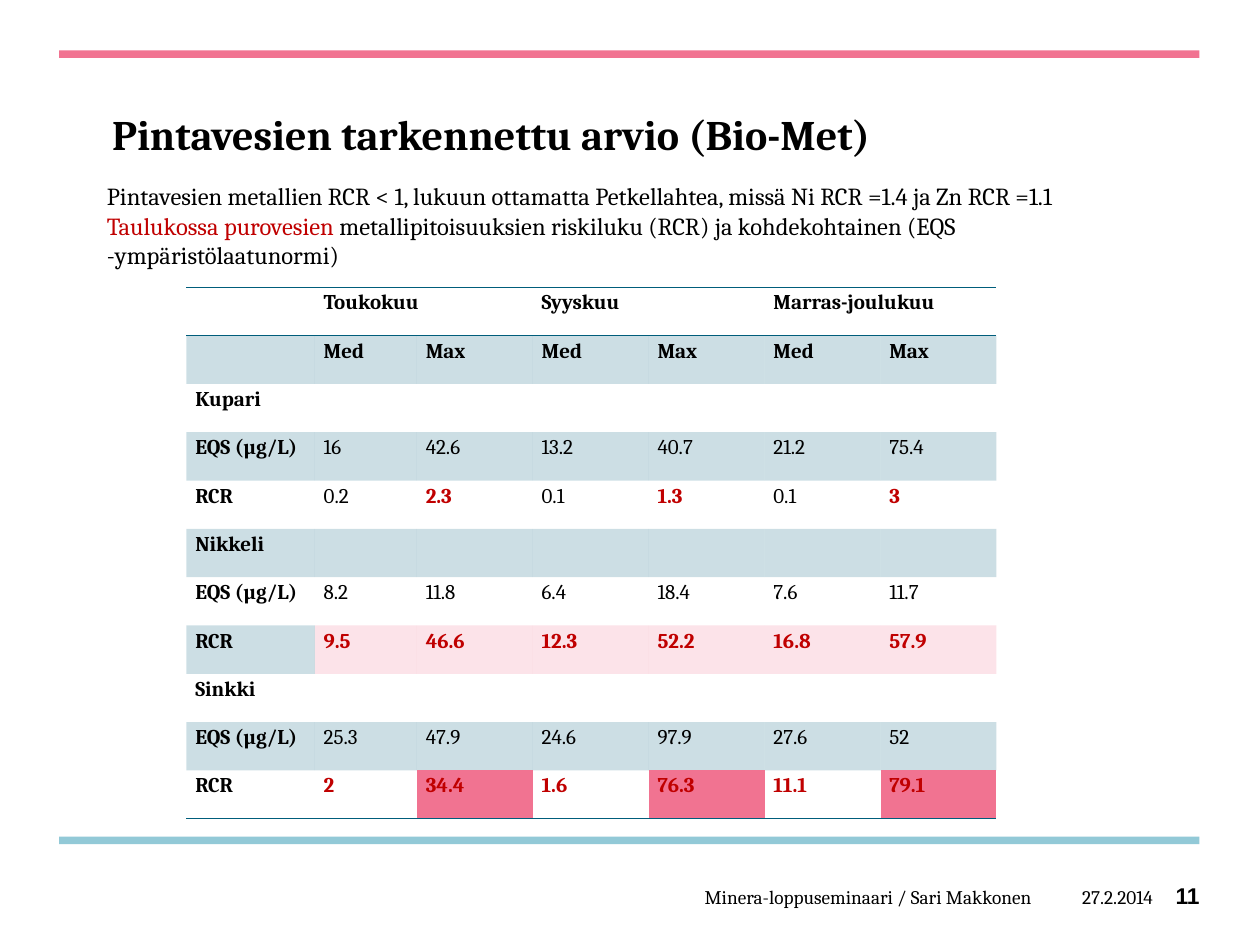
from lxml.etree import SubElement
from pptx import Presentation
from pptx.dml.color import RGBColor
from pptx.enum.shapes import MSO_SHAPE
from pptx.enum.text import MSO_ANCHOR as ANCHOR, PP_ALIGN as ALIGN
from pptx.oxml.ns import qn
from pptx.util import Inches, Pt

# Content
COLORS = {"black": "000000", "red": "C00000", "teal": "005D7B",
          "pink": "F17391", "blue": "92C9D7"}
TITLE = "Pintavesien tarkennettu arvio (Bio-Met)"
INTRO = [
    [("Pintavesien metallien RCR < 1, lukuun ottamatta Petkellahtea, "
      "missä Ni RCR =1.4 ja Zn RCR =1.1", "black")],
    [("Taulukossa purovesien ", "red"),
     ("metallipitoisuuksien riskiluku (RCR) ja kohdekohtainen "
      "(EQS -ympäristölaatunormi)", "black")],
]
MONTHS = ["Toukokuu", "Syyskuu", "Marras-joulukuu"]
METALS = {
    "Kupari": [("EQS (µg/L)", "16 42.6 13.2 40.7 21.2 75.4"),
               ("RCR", "0.2 2.3 0.1 1.3 0.1 3")],
    "Nikkeli": [("EQS (µg/L)", "8.2 11.8 6.4 18.4 7.6 11.7"),
                ("RCR", "9.5 46.6 12.3 52.2 16.8 57.9")],
    "Sinkki": [("EQS (µg/L)", "25.3 47.9 24.6 97.9 27.6 52"),
               ("RCR", "2 34.4 1.6 76.3 11.1 79.1")],
}
FOOTER = [  # text, left, width, size, font, bold, anchor, top inset
    ("27.2.2014", 8.19, 0.96, 11, "Cambria", False, ANCHOR.MIDDLE, 0),
    ("Minera-loppuseminaari / Sari Makkonen", 3.34, 4.85, 11, "Cambria",
     False, ANCHOR.MIDDLE, 0),
    ("11", 9.13, 0.39, 13, "Arial", True, ANCHOR.TOP, 0.02),
]

# Layout
LEFT, WIDTH = 0.47, 9.05
BARS = [(0.4, "pink"), (6.64, "blue")]
COLS = [1.02, 0.81] + [0.92] * 5
TABLE_LEFT, TABLE_TOP, TABLE_HEIGHT = 1.48, 2.28, 4.22
NO_STYLE = "{2D5ABB26-0587-4C30-8999-92F81FD0307C}"


def rgb(name):
    return RGBColor.from_string(COLORS[name])


def add_run(p, text, size, color="black", bold=False, font="Cambria"):
    r = p.add_run()
    r.text = text
    r.font.size, r.font.name, r.font.bold = Pt(size), font, bold
    r.font.color.rgb = rgb(color)


def fill_cell(cell, color, alpha=100):
    cell.fill.solid()
    cell.fill.fore_color.rgb = rgb(color)
    if alpha < 100:
        clr = cell._tc.tcPr.find(".//" + qn("a:srgbClr"))
        SubElement(clr, qn("a:alpha"), val=str(alpha * 1000))


def add_border(cell, side):
    ln = SubElement(cell._tc.get_or_add_tcPr(), qn("a:ln" + side), w=str(Pt(1)))
    SubElement(SubElement(ln, qn("a:solidFill")), qn("a:srgbClr"),
               val=COLORS["teal"])


def write_cell(cell, text, color, bold):
    p = cell.text_frame.paragraphs[0]
    p.line_spacing, p.space_after = 1.15, Pt(10)
    p.font.size = Pt(12)
    if text:
        add_run(p, text, 12, color, bold)


def table_rows():
    header = [""]
    for month in MONTHS:
        header += [month, ""]
    rows = [("", header), ("", [""] + ["Med", "Max"] * len(MONTHS))]
    for metal, lines in METALS.items():
        rows.append((metal, [metal] + [""] * 6))
        rows += [(metal, [label] + values.split()) for label, values in lines]
    return rows


prs = Presentation()
prs.slide_width, prs.slide_height = Inches(10), Inches(7.5)
slide = prs.slides.add_slide(prs.slide_layouts[5])

# Bars
for top, color in BARS:
    bar = slide.shapes.add_shape(MSO_SHAPE.RECTANGLE, Inches(LEFT), Inches(top),
                                 Inches(WIDTH), Inches(0.06))
    bar.shadow.inherit = False
    bar.fill.solid()
    bar.fill.fore_color.rgb = rgb(color)
    bar.line.fill.background()

# Title
title = slide.shapes.title
title.left, title.top = Inches(0.79), Inches(0.72)
title.width, title.height = Inches(8.74), Inches(0.59)
title.text_frame.vertical_anchor = ANCHOR.BOTTOM
p = title.text_frame.paragraphs[0]
p.alignment, p.line_spacing = ALIGN.LEFT, Pt(34)
add_run(p, TITLE, 24, bold=True)

# Table: risk ratios above 1 are red and bold
rows = table_rows()
table = slide.shapes.add_table(
    len(rows), len(COLS), Inches(TABLE_LEFT), Inches(TABLE_TOP),
    Inches(sum(COLS)), Inches(TABLE_HEIGHT)).table
table._tbl.tblPr.find(qn("a:tableStyleId")).text = NO_STYLE
for column, width in zip(table.columns, COLS):
    column.width = Inches(width)
for i, (metal, values) in enumerate(rows):
    table.rows[i].height = Inches(TABLE_HEIGHT / len(rows))
    is_rcr = values[0] == "RCR"
    for j, text in enumerate(values):
        cell = table.cell(i, j)
        cell.margin_left = cell.margin_right = Inches(0.07)
        cell.margin_top = cell.margin_bottom = 0
        high = is_rcr and j > 0 and float(text) > 1
        write_cell(cell, text, "red" if high else "black",
                   high or j == 0 or i < 2)
        if i == 0:
            add_border(cell, "T")
        if i in (0, len(rows) - 1):
            add_border(cell, "B")
        if is_rcr and metal == "Nikkeli" and j > 0:
            fill_cell(cell, "pink", 20)
        elif is_rcr and metal == "Sinkki" and j > 0 and j % 2 == 0:
            fill_cell(cell, "pink")
        elif i % 2:
            fill_cell(cell, "teal", 20)
        else:
            cell.fill.background()
for j in range(1, len(COLS), 2):
    table.cell(0, j).merge(table.cell(0, j + 1))

# Footer
for text, left, width, size, font, bold, anchor, inset in FOOTER:
    tf = slide.shapes.add_textbox(Inches(left), Inches(6.98), Inches(width),
                                  Inches(0.27)).text_frame
    tf.word_wrap, tf.vertical_anchor = True, anchor
    tf.margin_left = tf.margin_right = tf.margin_bottom = 0
    tf.margin_top = Inches(inset)
    p = tf.paragraphs[0]
    p.alignment = ALIGN.RIGHT
    add_run(p, text, size, bold=bold, font=font)

# Introduction
tf = slide.shapes.add_textbox(Inches(0.75), Inches(1.39), Inches(8.61),
                              Inches(0.8)).text_frame
tf.word_wrap = True
for i, runs in enumerate(INTRO):
    p = tf.add_paragraph() if i else tf.paragraphs[0]
    for text, color in runs:
        add_run(p, text, 14, color)

prs.save("out.pptx")
